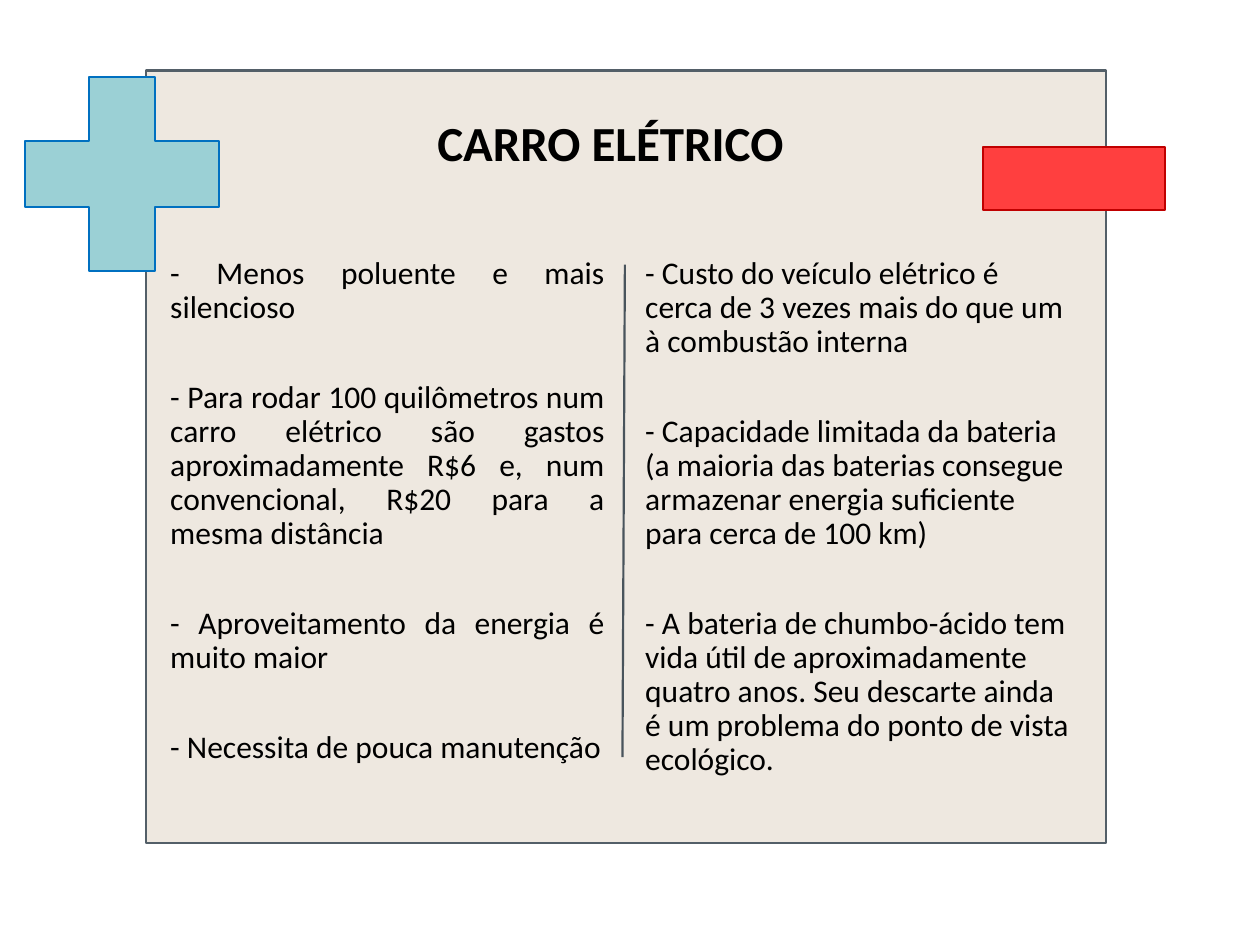
from lxml import etree
from pptx import Presentation
from pptx.dml.color import RGBColor
from pptx.enum import shapes, text
from pptx.oxml.ns import qn
from pptx.util import Pt

ADVANTAGES = [
    "- Menos poluente e mais silencioso",
    "- Para rodar 100 quilômetros num carro elétrico são gastos "
    "aproximadamente R$6 e, num convencional, R$20 para a mesma distância",
    "- Aproveitamento da energia é muito maior",
    "- Necessita de pouca manutenção",
]
DRAWBACKS = [
    "- Custo do veículo elétrico é cerca de 3 vezes mais do que um à "
    "combustão interna",
    "- Capacidade limitada da bateria \n(a maioria das baterias consegue "
    "armazenar energia suficiente para cerca de 100 km)",
    "- A bateria de chumbo-ácido tem vida útil de aproximadamente quatro anos. "
    "Seu descarte ainda é um problema do ponto de vista ecológico.",
]
LINE_WIDTH = Pt(1.25)


def color(value):
    return RGBColor.from_string(value)


def apply(target, values):
    for name, value in values.items():
        setattr(target, name, value)


def format_spans(para, size, bold=False):
    for span in para.runs:
        apply(span.font, {"name": "Calibri", "size": Pt(size), "bold": bold})
        span.font.color.rgb = color("000000")


def add_block(page, kind, box, fill, line):
    block = page.shapes.add_shape(kind, *map(Pt, box))
    block.shadow.inherit = False
    block.fill.solid()
    block.fill.fore_color.rgb = color(fill)
    block.line.color.rgb = color(line)
    block.line.width = LINE_WIDTH
    return block


def add_column(page, box, items, alignment):
    frame = page.shapes.add_textbox(*map(Pt, box)).text_frame
    margins = dict.fromkeys(
        ("margin_left", "margin_top", "margin_right", "margin_bottom"), Pt(3))
    apply(frame, {"word_wrap": True, **margins})
    for index, item in enumerate(items):
        para = frame.add_paragraph() if index else frame.paragraphs[0]
        para.text = item
        apply(para, {"alignment": alignment, "line_spacing": 0.9,
                     "space_before": Pt(32 if index else 0), "space_after": Pt(0)})
        format_spans(para, 18)


def add_divider(page, start, end):
    divider = page.shapes.add_connector(
        shapes.MSO_CONNECTOR.STRAIGHT, *map(Pt, start + end))
    divider.line.color.rgb = color("49545C")
    divider.line.width = LINE_WIDTH
    etree.SubElement(divider._element.spPr, qn("a:effectLst"))


def place_title(page, box, wording):
    title = page.shapes.title
    apply(title, dict(zip(("left", "top", "width", "height"), map(Pt, box))))
    frame = title.text_frame
    apply(frame, {"text": wording, "word_wrap": True,
                  "vertical_anchor": text.MSO_ANCHOR.TOP,
                  "auto_size": text.MSO_AUTO_SIZE.SHAPE_TO_FIT_TEXT})
    para = frame.paragraphs[0]
    para.alignment = text.PP_ALIGN.CENTER
    format_spans(para, 28, bold=True)
    # Bring the title in front of the panel
    page.shapes._spTree.append(title._element)


def build_comparison(page, box):
    left, top, width, height = box
    kinds = shapes.MSO_SHAPE

    # Background panel
    add_block(page, kinds.RECTANGLE, box, "EEE8E0", "535F68")

    # Advantages and drawbacks
    column_top = top + 103.7
    add_column(page, (left + 10.8, column_top, 254.2, 250.6),
               ADVANTAGES, text.PP_ALIGN.JUSTIFY)
    add_column(page, (left + 282.2, column_top, 250.6, 250.6),
               DRAWBACKS, text.PP_ALIGN.LEFT)

    # Plus and minus signs
    plus = add_block(page, kinds.CROSS, (left - 69.1, top + 3.6, 110.9, 110.9),
                     "9BD0D5", "0070C0")
    plus.adjustments[0] = 0.33
    add_block(page, kinds.RECTANGLE, (left + width - 70.6, top + 43.9, 104.4, 36),
              "FF3F3F", "C00000")

    # Divider between the columns
    add_divider(page, (left + 273.6, top + 110.9), (left + 272.2, top + 392.4))

    # Title
    place_title(page, (left + 100.8, top + 20.2, 329, 41), "CARRO ELÉTRICO")


def main():
    deck = Presentation()
    apply(deck, {"slide_width": Pt(720), "slide_height": Pt(540)})
    page = deck.slides.add_slide(deck.slide_layouts.get_by_name("Title Only"))
    build_comparison(page, (83.5, 40.3, 548.6, 441.4))
    deck.save("out.pptx")


if __name__ == "__main__":
    main()
